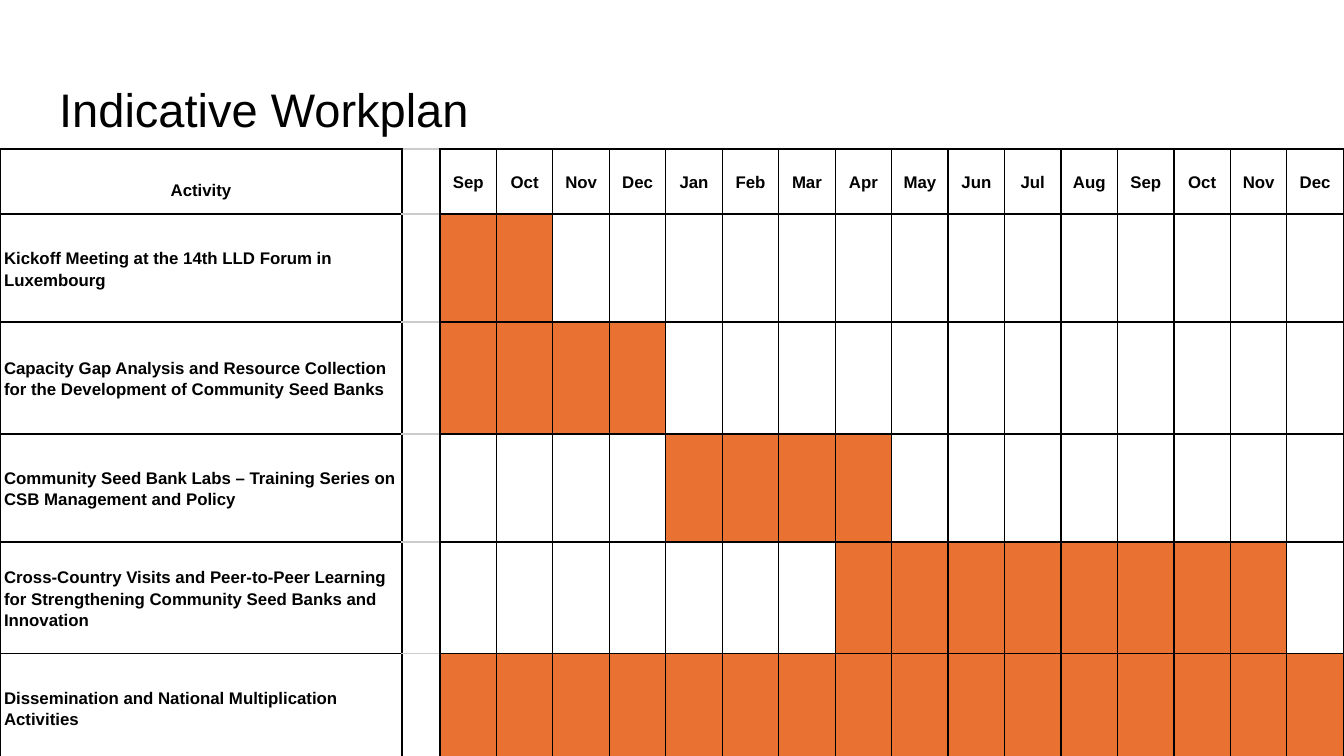
from dataclasses import dataclass

from lxml import etree
from pptx import Presentation
from pptx import util as u
from pptx.dml.color import RGBColor
from pptx.enum import text
from pptx.oxml import ns


@dataclass(frozen=True)
class Theme:
    font: str = "Arial"
    ink: str = "000000"
    paper: str = "FFFFFF"
    bar: str = "E97132"
    spacer_line: str = "CCCCCC"
    title_size: float = 25.2
    cell_size: float = 9
    line_width: float = 0.75


THEME = Theme()
SLIDE_WIDTH, SLIDE_HEIGHT = 1344, 756
EMU_PER_PX = 9144000 / SLIDE_WIDTH

MONTHS = "Sep Oct Nov Dec Jan Feb Mar Apr May Jun Jul Aug Sep Oct Nov Dec".split()
# Activity, row height, first and last active month (counted from 0)
ACTIVITIES = [
    ("Kickoff Meeting at the 14th LLD Forum in Luxembourg", 108, 0, 1),
    ("Capacity Gap Analysis and Resource Collection for the Development of "
     "Community Seed Banks", 112, 0, 3),
    ("Community Seed Bank Labs – Training Series on CSB Management and Policy",
     108, 4, 7),
    ("Cross-Country Visits and Peer-to-Peer Learning for Strengthening "
     "Community Seed Banks and Innovation", 112, 7, 14),
    ("Dissemination and National Multiplication Activities", 108, 0, 15),
]
HEADER_HEIGHT, ACTIVITY_WIDTH, SPACER_WIDTH = 65, 402, 38


def px(length):
    return u.Emu(round(length * EMU_PER_PX))


def set_attributes(target, values):
    for name, value in values.items():
        setattr(target, name, value)


def write(frame, words, size, **paragraph_format):
    paragraph = frame.paragraphs[0]
    set_attributes(paragraph, paragraph_format)
    run = paragraph.add_run()
    run.text = words
    set_attributes(run.font, {"name": THEME.font, "size": u.Pt(size)})
    run.font.color.rgb = RGBColor.from_string(THEME.ink)
    return run


def set_borders(cell, side_color, edge_color):
    properties = cell._tc.get_or_add_tcPr()
    sides = {"lnL": side_color, "lnR": side_color,
             "lnT": edge_color, "lnB": edge_color}
    for position, (tag, color) in enumerate(sides.items()):
        line = etree.Element(ns.qn(f"a:{tag}"), w=str(u.Pt(THEME.line_width)))
        fill = etree.SubElement(line, ns.qn("a:solidFill"))
        etree.SubElement(fill, ns.qn("a:srgbClr"), val=color)
        properties.insert(position, line)


def fill_cell(cell, color):
    cell.fill.solid()
    cell.fill.fore_color.rgb = RGBColor.from_string(color)


def write_cell(cell, words, alignment, anchor):
    write(cell.text_frame, words, THEME.cell_size,
          alignment=alignment, line_spacing=1.15).font.bold = True
    cell.vertical_anchor = anchor


def add_title(slide, left, top, width, height):
    frame = slide.shapes.add_textbox(px(left), px(top), px(width), px(height)).text_frame
    inset = u.Inches(0.1)
    set_attributes(frame, {
        "word_wrap": True, "vertical_anchor": text.MSO_ANCHOR.BOTTOM,
        "margin_left": inset, "margin_right": inset,
        "margin_top": inset, "margin_bottom": inset,
    })
    write(frame, "Indicative Workplan", THEME.title_size)


def add_workplan(slide, left, top, width):
    heights = [HEADER_HEIGHT] + [activity[1] for activity in ACTIVITIES]
    table = slide.shapes.add_table(
        len(heights), len(MONTHS) + 2,
        px(left), px(top), px(width), px(sum(heights))).table
    set_attributes(table, {"first_row": False, "horz_banding": False})

    # Grid
    month_width = (width - ACTIVITY_WIDTH - SPACER_WIDTH) / len(MONTHS)
    widths = [ACTIVITY_WIDTH, SPACER_WIDTH] + [month_width] * len(MONTHS)
    for column, column_width in zip(table.columns, widths):
        column.width = px(column_width)
    for row, height in zip(table.rows, heights):
        row.height = px(height)
        for index, cell in enumerate(row.cells):
            set_attributes(cell, {
                "margin_left": u.Inches(0.03), "margin_right": u.Inches(0.03),
                "margin_top": u.Inches(0.1), "margin_bottom": u.Inches(0.1),
            })
            cell.text_frame.paragraphs[0].font.size = u.Pt(THEME.cell_size)
            fill_cell(cell, THEME.paper)
            set_borders(cell, THEME.ink, THEME.spacer_line if index == 1 else THEME.ink)

    # Header
    center, middle = text.PP_ALIGN.CENTER, text.MSO_ANCHOR.MIDDLE
    write_cell(table.cell(0, 0), "Activity", center, text.MSO_ANCHOR.BOTTOM)
    for column, month in enumerate(MONTHS, start=2):
        write_cell(table.cell(0, column), month, center, middle)

    # Activities and their bars
    for row, (activity, _, first, last) in enumerate(ACTIVITIES, start=1):
        write_cell(table.cell(row, 0), activity, text.PP_ALIGN.LEFT, middle)
        for month in range(first, last + 1):
            fill_cell(table.cell(row, month + 2), THEME.bar)


def main():
    presentation = Presentation()
    set_attributes(presentation, {"slide_width": px(SLIDE_WIDTH),
                                  "slide_height": px(SLIDE_HEIGHT)})
    slide = presentation.slides.add_slide(presentation.slide_layouts[6])
    add_title(slide, 46, 66, 1252, 84)
    add_workplan(slide, 0, 149, SLIDE_WIDTH)
    presentation.save("out.pptx")


if __name__ == "__main__":
    main()
